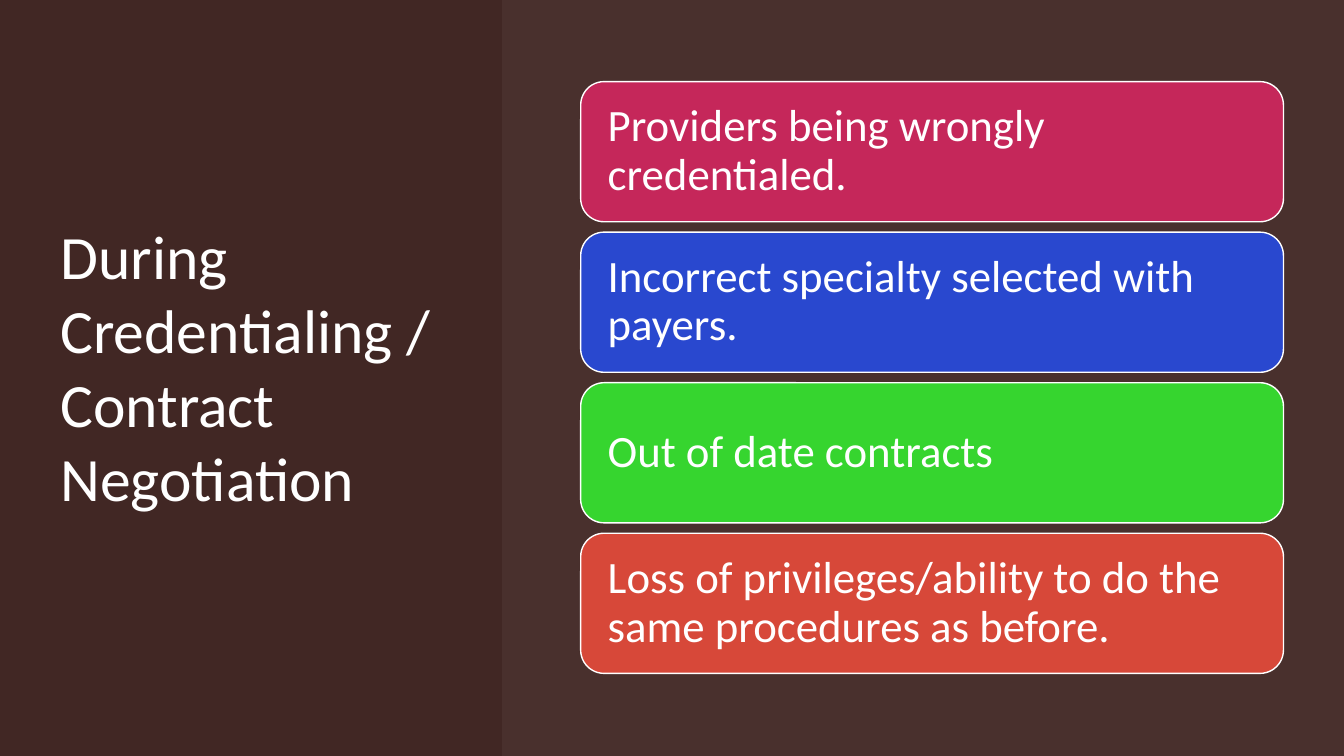
"""Build the credentialing and contract negotiation slide."""
from dataclasses import dataclass

from lxml import etree
from pptx import Presentation
from pptx import util as u
from pptx.dml.color import RGBColor
from pptx.enum import shapes, text
from pptx.oxml import ns

BROWN = RGBColor(0x41, 0x27, 0x24)
PALE = RGBColor(0xF0, 0xE6, 0xE5)
WHITE = RGBColor(0xFF, 0xFF, 0xFF)
CRIMSON = RGBColor(0xC5, 0x27, 0x5A)
BLUE = RGBColor(0x29, 0x48, 0xCF)
GREEN = RGBColor(0x36, 0xD5, 0x2F)
RED = RGBColor(0xD7, 0x48, 0x39)

WIDTH, HEIGHT = 13.33, 7.5
CARD_LEFT, CARD_WIDTH, CARD_HEIGHT = 5.76, 6.97, 1.39
FIRST_TOP, LAST_TOP = 0.81, 5.29


@dataclass(frozen=True)
class Box:
    left: float
    top: float
    width: float
    height: float

    def lengths(self) -> list[u.Length]:
        return [u.Inches(v) for v in (self.left, self.top, self.width, self.height)]


@dataclass(frozen=True)
class Issue:
    wording: str
    color: RGBColor


ISSUES = [
    Issue("Providers being wrongly credentialed.", CRIMSON),
    Issue("Incorrect specialty selected with payers.", BLUE),
    Issue("Out of date contracts", GREEN),
    Issue("Loss of privileges/ability to do the same procedures as before.", RED),
]


def add_block(slide, kind: shapes.MSO_SHAPE, box: Box, color: RGBColor):
    block = slide.shapes.add_shape(kind, *box.lengths())
    block.shadow.inherit = False
    block.fill.solid()
    block.fill.fore_color.rgb = color
    block.line.fill.background()
    return block


def write(frame, wording: str, size: float, inset: float, spacing: float) -> None:
    frame.text = wording
    frame.word_wrap = True
    frame.vertical_anchor = text.MSO_ANCHOR.MIDDLE
    frame.margin_left = frame.margin_right = u.Inches(inset)
    frame.margin_top = frame.margin_bottom = u.Inches(inset)
    paragraph = frame.paragraphs[0]
    paragraph.alignment = text.PP_ALIGN.LEFT
    paragraph.line_spacing = spacing
    font = paragraph.runs[0].font
    font.name = "Calibri"
    font.size = u.Pt(size)
    font.color.rgb = WHITE


def add_panel(slide) -> None:
    panel = add_block(slide, shapes.MSO_SHAPE.RECTANGLE, Box(4.98, 0, 8.35, HEIGHT), PALE)
    tint = panel._element.spPr.find(".//" + ns.qn("a:srgbClr"))
    etree.SubElement(tint, ns.qn("a:alpha"), val="5000")


def add_card(slide, issue: Issue, top: float) -> None:
    box = Box(CARD_LEFT, top, CARD_WIDTH, CARD_HEIGHT)
    card = add_block(slide, shapes.MSO_SHAPE.ROUNDED_RECTANGLE, box, issue.color)
    card.line.color.rgb = WHITE
    card.line.width = u.Pt(1)
    write(card.text_frame, issue.wording, size=32, inset=0.2, spacing=0.9)


def main() -> None:
    deck = Presentation()
    deck.slide_width, deck.slide_height = u.Inches(WIDTH), u.Inches(HEIGHT)
    slide = deck.slides.add_slide(deck.slide_layouts[6])
    slide.background.fill.solid()
    slide.background.fill.fore_color.rgb = BROWN

    add_block(slide, shapes.MSO_SHAPE.RECTANGLE, Box(0, 0, WIDTH, HEIGHT), BROWN)
    title = slide.shapes.add_textbox(*Box(0.6, 0.6, 3.9, 6.06).lengths())
    write(title.text_frame, "During Credentialing /Contract Negotiation", size=44, inset=0, spacing=1.0)
    add_panel(slide)

    pitch = (LAST_TOP - FIRST_TOP) / (len(ISSUES) - 1)
    for index, issue in enumerate(ISSUES):
        add_card(slide, issue, FIRST_TOP + index * pitch)

    deck.save("out.pptx")


if __name__ == "__main__":
    main()
